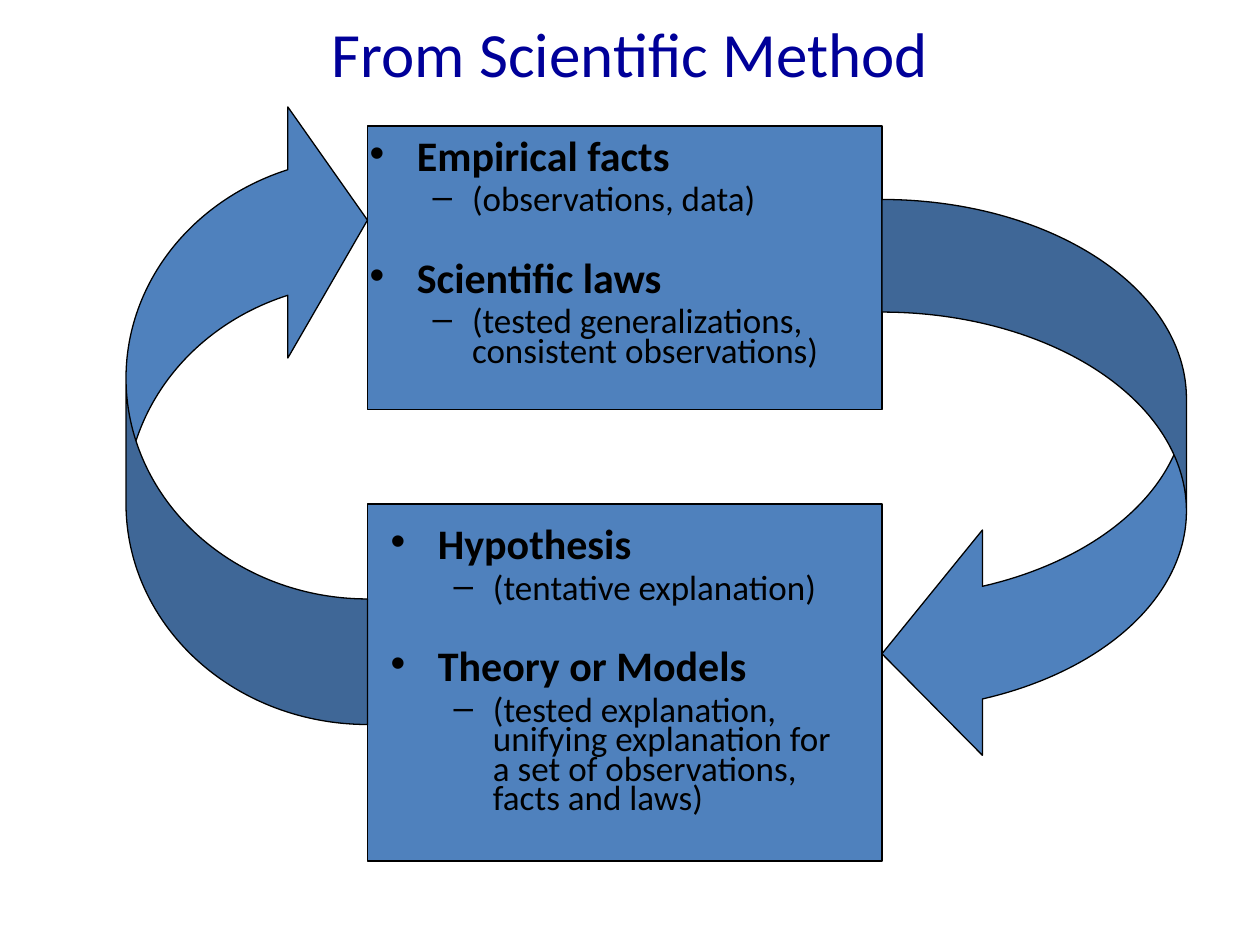
"""Builds a slide showing the cycle of the scientific method."""
from pptx import Presentation
from pptx.dml.color import RGBColor
from pptx.enum.shapes import MSO_SHAPE
from pptx.enum.text import MSO_ANCHOR, MSO_AUTO_SIZE, PP_ALIGN
from pptx.util import Pt

RECTANGLE = MSO_SHAPE.RECTANGLE
CURVED_ARROW = MSO_SHAPE.CURVED_LEFT_ARROW
MIDDLE, TOP = MSO_ANCHOR.MIDDLE, MSO_ANCHOR.TOP
CENTER, LEFT = PP_ALIGN.CENTER, PP_ALIGN.LEFT
NO_FIT = MSO_AUTO_SIZE.NONE

BLUE = RGBColor(0x4F, 0x81, 0xBD)
NAVY = RGBColor(0x00, 0x00, 0x99)
BLACK = RGBColor(0x00, 0x00, 0x00)

FACTS = [
    ("Empirical facts", "(observations, data)"),
    ("Scientific laws", "(tested generalizations, consistent observations)"),
]
IDEAS = [
    ("Hypothesis", "(tentative explanation)"),
    ("Theory or Models",
     "(tested explanation, unifying explanation for a set of observations, facts and laws)"),
]


def write(para, text, size=20, color=BLACK, bold=False, align=LEFT):
    para.alignment = align
    span = para.add_run()
    span.text = text
    span.font.name = "Calibri"
    span.font.size = Pt(size)
    span.font.color.rgb = color
    span.font.bold = bold


def place(box, left, top, width, height):
    box.left, box.top = Pt(left), Pt(top)
    box.width, box.height = Pt(width), Pt(height)


class CycleSlide:
    def __init__(self, deck):
        self.page = deck.slides.add_slide(deck.slide_layouts[3])
        self.fill, self.line, self.line_width = BLUE, BLACK, Pt(0.75)

    def title(self, text, *area):
        box = self.page.shapes.title
        place(box, *area)
        box.text_frame.vertical_anchor = MIDDLE
        write(box.text_frame.paragraphs[0], text, size=36, color=NAVY, align=CENTER)

    def shape(self, kind, *area):
        box = self.page.shapes.add_shape(kind, *map(Pt, area))
        box.shadow.inherit = False
        box.fill.solid()
        box.fill.fore_color.rgb = self.fill
        box.line.color.rgb = self.line
        box.line.width = self.line_width
        return box

    def panel(self, *area):
        box = self.shape(RECTANGLE, *area)
        self.page.shapes._spTree.insert(2, box._element)

    def arrow(self, *area, adjustments, rotation=0):
        box = self.shape(CURVED_ARROW, *area)
        box.rotation = rotation
        for index, value in enumerate(adjustments):
            box.adjustments[index] = value

    def topics(self, number, entries, *area):
        box = self.page.placeholders[number]
        place(box, *area)
        frame = box.text_frame
        frame.auto_size = NO_FIT
        frame.vertical_anchor = TOP
        for index, (heading, detail) in enumerate(entries):
            para = frame.add_paragraph() if index else frame.paragraphs[0]
            self.bullet(para, heading, 0, 27 if index else 3, size=24, bold=True)
            self.bullet(frame.add_paragraph(), detail, 1, 5.8)

    def bullet(self, para, text, level, before, **style):
        para.level = level
        para.line_spacing = 0.7
        para.space_before = Pt(before)
        margin, hanging = ((27, 27), (58.5, 22.5))[level]
        properties = para._p.get_or_add_pPr()
        properties.set("marL", str(Pt(margin)))
        properties.set("indent", str(-Pt(hanging)))
        write(para, text, **style)


def main():
    deck = Presentation()
    deck.slide_width, deck.slide_height = Pt(720), Pt(540)
    cycle = CycleSlide(deck)
    cycle.title("From Scientific Method", 54, 0, 612, 60)
    cycle.panel(210, 72, 294, 162)
    cycle.panel(210, 288, 294, 204)
    cycle.topics(1, FACTS, 204, 78, 288, 156)
    cycle.topics(2, IDEAS, 216, 300, 276, 192)
    cycle.arrow(504, 114, 174, 324, adjustments=(0.37, 0.74, 0.33))
    cycle.arrow(72, 54, 138, 360, adjustments=(0.52, 1.04, 0.33), rotation=180)
    deck.save("out.pptx")


if __name__ == "__main__":
    main()
